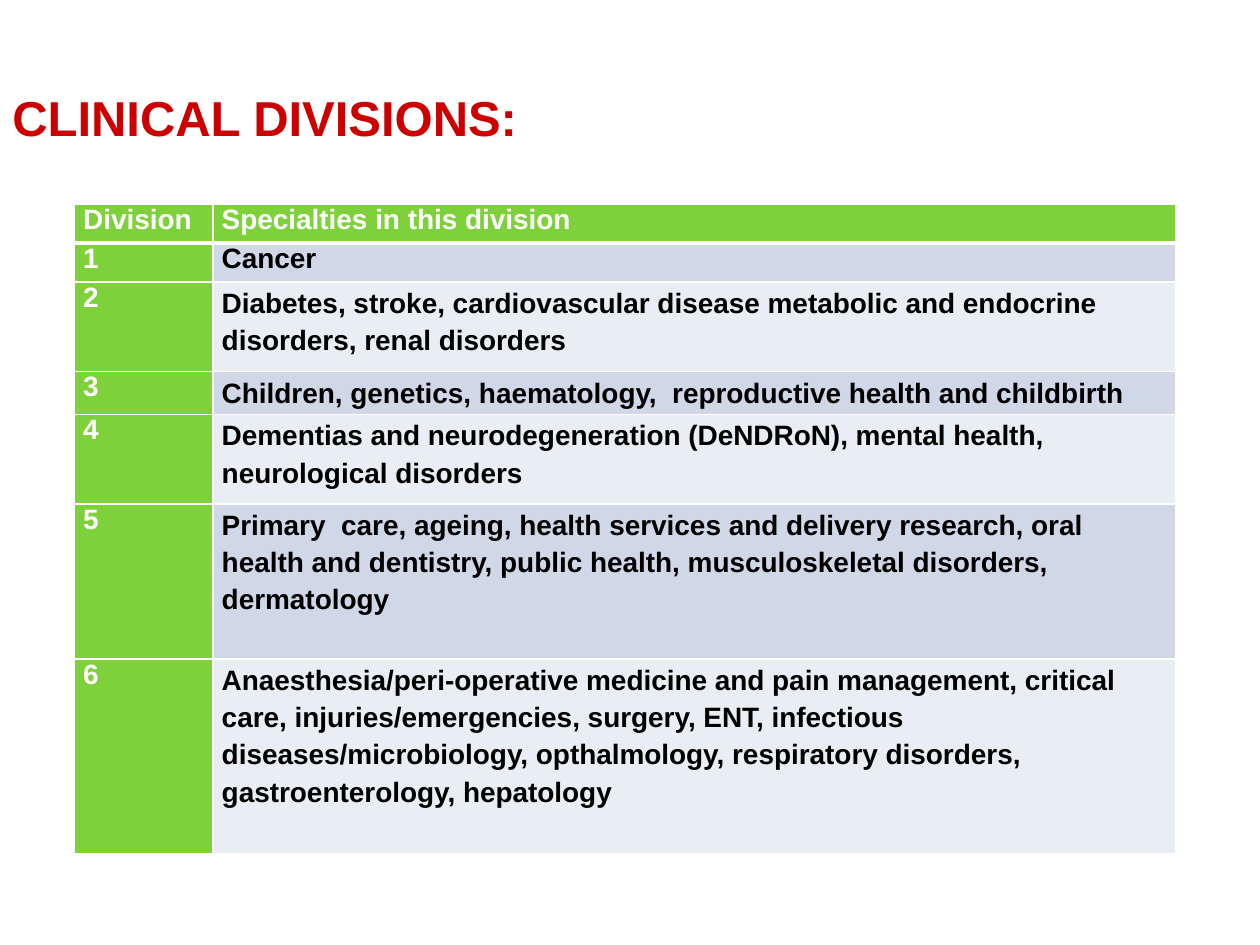
from lxml import etree
from pptx import Presentation
from pptx.dml.color import RGBColor
from pptx.enum.text import MSO_ANCHOR
from pptx.oxml.ns import qn
from pptx.util import Inches, Pt

MIDDLE = MSO_ANCHOR.MIDDLE
TOP = MSO_ANCHOR.TOP

COLORS = {
    "title": "CC0000",
    "green": "7FD13B",
    "odd": "D0D8E8",
    "even": "E9EDF4",
    "white": "FFFFFF",
    "black": "000000",
}
TITLE = "CLINICAL DIVISIONS:"
HEADERS = ("Division", "Specialties in this division")
SPECIALTIES = [
    "Cancer",
    "Diabetes, stroke, cardiovascular disease metabolic and endocrine disorders, renal disorders",
    "Children, genetics, haematology,  reproductive health and childbirth",
    "Dementias and neurodegeneration (DeNDRoN), mental health, neurological disorders",
    "Primary  care, ageing, health services and delivery research, oral health and dentistry, "
    "public health, musculoskeletal disorders, dermatology",
    "Anaesthesia/peri-operative medicine and pain management, critical care, "
    "injuries/emergencies, surgery, ENT, infectious diseases/microbiology, opthalmology, "
    "respiratory disorders, gastroenterology, hepatology",
]
COLUMN_WIDTHS = (1.1, 7.64)
ROW_HEIGHTS = (0.31, 0.31, 0.71, 0.34, 0.71, 1.23, 1.55)
TABLE_LEFT, TABLE_TOP = 0.59, 1.62
CELL_FORMAT = {
    "margin_left": Inches(0.07),
    "margin_right": Inches(0.07),
    "margin_top": 0,
    "margin_bottom": 0,
    "vertical_anchor": TOP,
}


def write(para, text, size, color):
    span = para.add_run()
    span.text = text
    for name, value in {"name": "Arial", "size": Pt(size), "bold": True}.items():
        setattr(span.font, name, value)
    span.font.color.rgb = RGBColor.from_string(COLORS[color])


def add_borders(cell, widths):
    properties = cell._tc.get_or_add_tcPr()
    for position, (side, width) in enumerate(widths.items()):
        line = etree.Element(qn(f"a:ln{side}"), w=str(Pt(width)))
        fill = etree.SubElement(line, qn("a:solidFill"))
        etree.SubElement(fill, qn("a:srgbClr"), val=COLORS["white"])
        properties.insert(position, line)


def add_title(page):
    box = page.shapes.add_textbox(0, Inches(0.3), Inches(9), Inches(1.25))
    box.text_frame.word_wrap = True
    box.text_frame.vertical_anchor = MIDDLE
    write(box.text_frame.paragraphs[0], TITLE, 28, "title")


def add_divisions(page):
    rows = [HEADERS] + [(str(number), text) for number, text in enumerate(SPECIALTIES, 1)]
    table = page.shapes.add_table(
        len(rows), len(HEADERS), Inches(TABLE_LEFT), Inches(TABLE_TOP),
        Inches(sum(COLUMN_WIDTHS)), Inches(sum(ROW_HEIGHTS)),
    ).table
    for column, width in zip(table.columns, COLUMN_WIDTHS):
        column.width = Inches(width)
    for row, height in zip(table.rows, ROW_HEIGHTS):
        row.height = Inches(height)

    for row_index, row in enumerate(rows):
        for column_index, text in enumerate(row):
            cell = table.cell(row_index, column_index)
            for name, value in CELL_FORMAT.items():
                setattr(cell, name, value)
            is_label = row_index == 0 or column_index == 0
            band = "odd" if row_index % 2 else "even"
            cell.fill.solid()
            cell.fill.fore_color.rgb = RGBColor.from_string(COLORS["green" if is_label else band])
            para = cell.text_frame.paragraphs[0]
            if row_index > 1 and not is_label:
                para.line_spacing = 1.2
            write(para, text, 16, "white" if is_label else "black")
            add_borders(cell, {
                "L": 1,
                "R": 1,
                "T": 3 if row_index == 1 else 1,
                "B": 3 if row_index == 0 else 1,
            })


def main():
    deck = Presentation()
    deck.slide_width, deck.slide_height = Inches(10), Inches(7.5)
    page = deck.slides.add_slide(deck.slide_layouts[6])
    add_title(page)
    add_divisions(page)
    deck.save("out.pptx")


if __name__ == "__main__":
    main()
